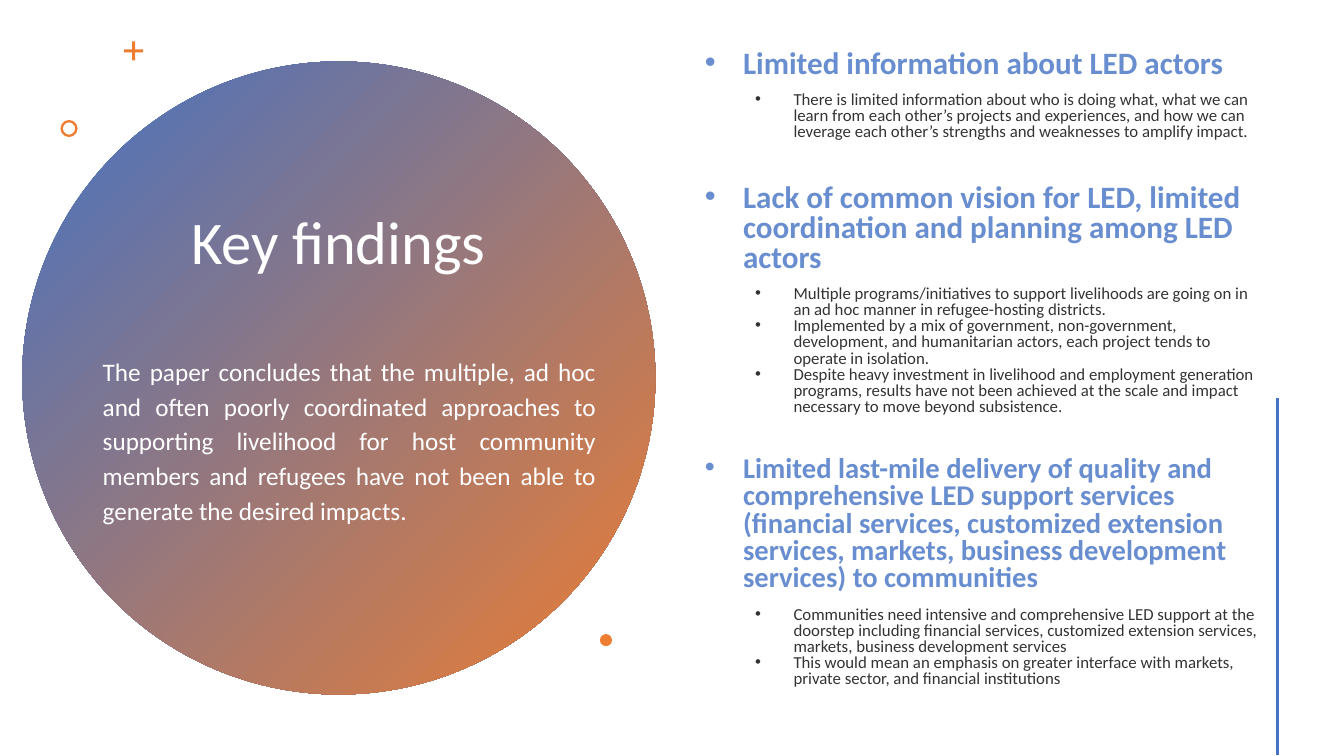
from lxml.etree import SubElement
from pptx import Presentation
from pptx.dml.color import RGBColor
from pptx.enum.shapes import MSO_CONNECTOR, MSO_SHAPE
from pptx.enum.text import MSO_ANCHOR, MSO_AUTO_SIZE, PP_ALIGN
from pptx.oxml.ns import qn
from pptx.util import Pt

SCALE = 9144  # EMU in one px, 100 px to the inch
FONT = "Calibri"
BLUE, ORANGE, WHITE = "4472C4", "ED7D31", "FFFFFF"
SOFT, DARK = "698ED0", "333333"

# heading, its size, space before it, space before its points, points
FINDINGS = [
    ("Limited information about LED actors", 22.2, 0, 9, [
        "There is limited information about who is doing what, what we can learn from each "
        "other’s projects and experiences, and how we can leverage each other’s strengths "
        "and weaknesses to amplify impact.",
    ]),
    ("Lack of common vision for LED, limited coordination and planning among LED actors",
     22.2, 31, 9, [
         "Multiple programs/initiatives to support livelihoods are going on in an ad hoc "
         "manner in refugee-hosting districts.",
         "Implemented by a mix of government, non-government, development, and humanitarian "
         "actors, each project tends to operate in isolation.",
         "Despite heavy investment in livelihood and employment generation programs, results "
         "have not been achieved at the scale and impact necessary to move beyond subsistence.",
     ]),
    ("Limited last-mile delivery of quality and comprehensive LED support services (financial "
     "services, customized extension services, markets, business development services) to "
     "communities", 20.4, 29, 10, [
         "Communities need intensive and comprehensive LED support at the doorstep including "
         "financial services, customized extension services, markets, business development "
         "services",
         "This would mean an emphasis on greater interface with markets, private sector, and "
         "financial institutions",
     ]),
]
SUMMARY = ("The paper concludes that the multiple, ad hoc and often poorly coordinated "
           "approaches to supporting livelihood for host community members and refugees have "
           "not been able to generate the desired impacts.")


def px(count):
    return count * SCALE


def rgb(code):
    return RGBColor.from_string(code)


def place(shape, *box):
    shape.left, shape.top, shape.width, shape.height = map(px, box)


def style(para, size, color, spacing, bold=False):
    font = para.font
    font.name, font.size, font.bold = FONT, Pt(size), bold
    font.color.rgb = rgb(color)
    para.line_spacing = spacing


def add_mark(slide, kind, box, adjust=None):
    """Add a plain orange ornament."""
    mark = slide.shapes.add_shape(kind, *map(px, box))
    mark.shadow.inherit = False
    mark.fill.solid()
    mark.fill.fore_color.rgb = rgb(ORANGE)
    mark.line.fill.background()
    if adjust is not None:
        mark.adjustments[0] = adjust


def add_disc(slide):
    disc = slide.shapes.add_shape(MSO_SHAPE.OVAL, *map(px, (22, 61, 628, 628)))
    disc.shadow.inherit = False
    disc.line.fill.background()
    disc.fill.gradient()
    disc.fill.gradient_angle = 315
    for stop, color in zip(disc.fill.gradient_stops, (BLUE, ORANGE)):
        stop.color.rgb = rgb(color)
    slide.shapes._spTree.insert(2, disc._element)  # behind the title


def add_rule(slide):
    rule = slide.shapes.add_connector(
        MSO_CONNECTOR.STRAIGHT, *map(px, (1267, 395, 1267, 749)))
    rule.line.color.rgb = rgb(BLUE)
    rule.line.width = Pt(2)
    SubElement(rule._element.spPr, qn("a:effectLst"))


def set_title(title):
    place(title, 136, 141, 399, 467)
    frame = title.text_frame
    frame.text = "Key findings"
    frame.auto_size = MSO_AUTO_SIZE.NONE
    frame.vertical_anchor = MSO_ANCHOR.TOP
    frame.margin_top = px(70)
    para = frame.paragraphs[0]
    para.alignment = PP_ALIGN.CENTER
    style(para, 43.2, WHITE, 0.9)


def add_summary(slide):
    box = slide.shapes.add_textbox(*map(px, (92, 344, 509, 182)))
    frame = box.text_frame
    frame.word_wrap = True
    frame.text = SUMMARY
    para = frame.paragraphs[0]
    para.alignment = PP_ALIGN.JUSTIFY
    style(para, 18, WHITE, 1.15)


def add_item(frame, text, level, size, color, before):
    """Add a bulleted line; level 0 is a bold heading."""
    para = frame.paragraphs[0] if not frame.text else frame.add_paragraph()
    para.text = text
    para.level = level
    para.space_before, para.space_after = Pt(before), Pt(0)
    style(para, size, color, 0.8, bold=level == 0)
    props = para._p.get_or_add_pPr()
    props.set("marL", str(px(38 + 50 * level)))
    props.set("indent", str(px(-38)))
    SubElement(props, qn("a:buFont")).set("typeface", "Arial")
    SubElement(props, qn("a:buChar")).set("char", "•")
    # Default run properties come after the bullet in the schema
    for node in props.findall(qn("a:defRPr")):
        props.append(node)


def set_body(body):
    place(body, 689, 50, 578, 691)
    frame = body.text_frame
    frame.auto_size = MSO_AUTO_SIZE.NONE
    frame.vertical_anchor = MSO_ANCHOR.TOP
    frame.margin_top = 0
    for heading, size, before, gap, points in FINDINGS:
        add_item(frame, heading, 0, size, SOFT, before)
        for index, point in enumerate(points):
            add_item(frame, point, 1, 12, DARK, 0 if index else gap)


def main():
    deck = Presentation()
    deck.slide_width, deck.slide_height = px(1333), px(750)
    slide = deck.slides.add_slide(deck.slide_layouts[1])
    add_disc(slide)
    set_title(slide.shapes.title)
    add_mark(slide, MSO_SHAPE.CROSS, (123, 41, 19, 19), 0.42)
    add_mark(slide, MSO_SHAPE.DONUT, (60, 119, 17, 17), 0.14)
    set_body(slide.placeholders[1])
    add_mark(slide, MSO_SHAPE.OVAL, (595, 629, 12, 12))
    add_rule(slide)
    add_summary(slide)
    deck.save("out.pptx")


if __name__ == "__main__":
    main()
